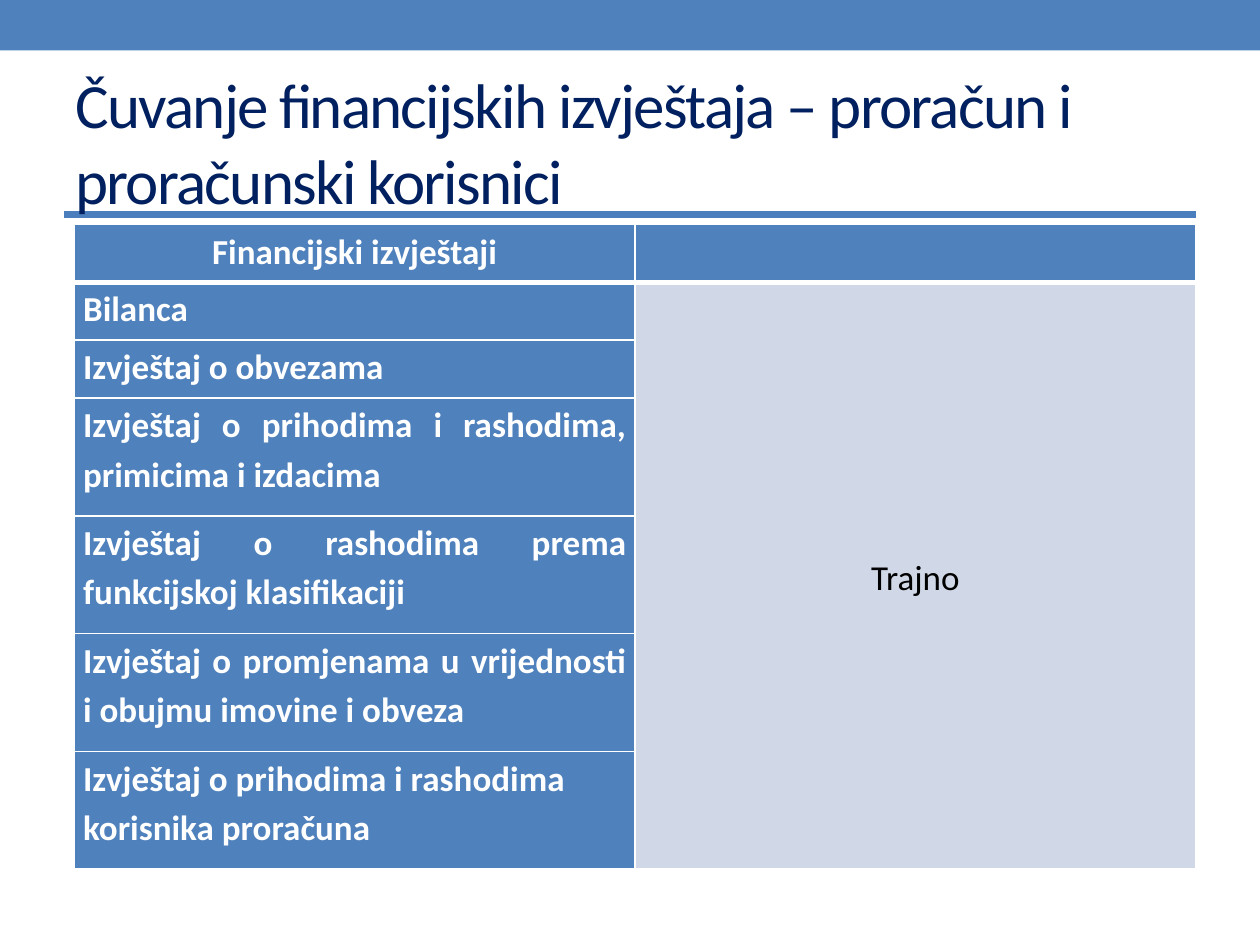
import pptx
import pptx.util
import pptx.dml.color
import pptx.enum.shapes
import pptx.enum.text
import pptx.oxml
import pptx.oxml.ns

Inches, Pt = pptx.util.Inches, pptx.util.Pt
ALIGN = pptx.enum.text.PP_ALIGN
MIDDLE = pptx.enum.text.MSO_ANCHOR.MIDDLE
BLUE, NAVY, PALE, WHITE, BLACK = "4F81BD", "002060", "D0D8E8", "FFFFFF", "000000"
REPORTS = [
    "Bilanca",
    "Izvještaj o obvezama",
    "Izvještaj o prihodima i rashodima, primicima i izdacima",
    "Izvještaj o rashodima prema funkcijskoj klasifikaciji",
    "Izvještaj o promjenama u vrijednosti i obujmu imovine i obveza",
    "Izvještaj o prihodima i rashodima korisnika proračuna",
]


def rgb(color):
    """Turn a hex string into a colour."""
    return pptx.dml.color.RGBColor.from_string(color)


def set_font(p, size, color, bold=False):
    """Set the font of a paragraph."""
    p.font.name, p.font.size, p.font.bold = "Calibri", Pt(size), bold
    p.font.color.rgb = rgb(color)


def add_band(s, x, y, w, h):
    """Draw the plain band across the top."""
    sp = s.shapes.add_shape(pptx.enum.shapes.MSO_SHAPE.RECTANGLE,
                            Inches(x), Inches(y), Inches(w), Inches(h))
    sp.shadow.inherit = False
    sp.fill.solid()
    sp.fill.fore_color.rgb = rgb(BLUE)
    sp.line.fill.background()


def add_rule(s, x, y, w):
    """Draw the horizontal rule under the title."""
    line = s.shapes.add_connector(pptx.enum.shapes.MSO_CONNECTOR.STRAIGHT,
                                  Inches(x), Inches(y), Inches(x + w), Inches(y))
    line.line.color.rgb = rgb("4B7EBC")
    line.line.width = Pt(4)
    line._element.spPr.append(pptx.oxml.parse_xml(
        f"<a:effectLst {pptx.oxml.ns.nsdecls('a')}/>"))


def add_title(s, text, x, y, w, h):
    """Write the slide title with tightened letters."""
    tf = s.shapes.add_textbox(Inches(x), Inches(y), Inches(w), Inches(h)).text_frame
    tf.word_wrap = True
    tf.vertical_anchor = MIDDLE
    p = tf.paragraphs[0]
    r = p.add_run()
    r.text = text
    r._r.get_or_add_rPr().set("spc", "-100")
    set_font(p, 36, NAVY)


def style_cell(cell, fill, bottom=1):
    """Fill a cell and give it white borders."""
    tcPr = cell._tc.get_or_add_tcPr()
    for side, width in (("L", 1), ("R", 1), ("T", 1), ("B", bottom)):
        tcPr.append(pptx.oxml.parse_xml(
            f'<a:ln{side} {pptx.oxml.ns.nsdecls("a")} w="{Pt(width)}"><a:solidFill>'
            f'<a:srgbClr val="{WHITE}"/></a:solidFill></a:ln{side}>'))
    cell.fill.solid()
    cell.fill.fore_color.rgb = rgb(fill)


def write_cell(cell, text, align, color=WHITE, bold=True):
    """Write one paragraph in a cell."""
    cell.margin_left = cell.margin_right = Inches(0.07)
    cell.margin_top = cell.margin_bottom = 0
    p = cell.text_frame.paragraphs[0]
    p.text = text
    p.alignment, p.line_spacing, p.space_after = align, 1.15, Pt(10)
    set_font(p, 20, color, bold)


def add_reports_table(s, x, y, w, h):
    """Build the table of reports and how long they are kept."""
    rows = len(REPORTS) + 1
    table = s.shapes.add_table(rows, 2, Inches(x), Inches(y), Inches(w), Inches(h)).table
    short, tall = 0.46, (h - 3 * 0.46) / (rows - 3)
    for i, row in enumerate(table.rows):
        row.height = Inches(short if i < 3 else tall)
        style_cell(table.cell(i, 0), BLUE, 1 if i else 3)
        style_cell(table.cell(i, 1), PALE if i else BLUE, 1 if i else 3)
    write_cell(table.cell(0, 0), "Financijski izvještaji", ALIGN.CENTER)
    for i, report in enumerate(REPORTS, 1):
        write_cell(table.cell(i, 0), report, ALIGN.JUSTIFY if i < rows - 1 else ALIGN.LEFT)
    period = table.cell(1, 1)
    period.merge(table.cell(rows - 1, 1))
    period.vertical_anchor = MIDDLE
    write_cell(period, "Trajno", ALIGN.CENTER, BLACK, False)


def main():
    """Build the slide and save it."""
    prs = pptx.Presentation()
    prs.slide_width, prs.slide_height = Inches(10), Inches(7.5)
    s = prs.slides.add_slide(prs.slide_layouts[6])
    add_band(s, 0, 0, 10, 0.4)
    add_rule(s, 0.51, 1.7, 8.98)
    add_title(s, "Čuvanje financijskih izvještaja – proračun i proračunski korisnici",
              0.5, 0.58, 9, 1.08)
    add_reports_table(s, 0.59, 1.78, 8.9, 5.12)
    prs.save("out.pptx")


if __name__ == "__main__":
    main()
